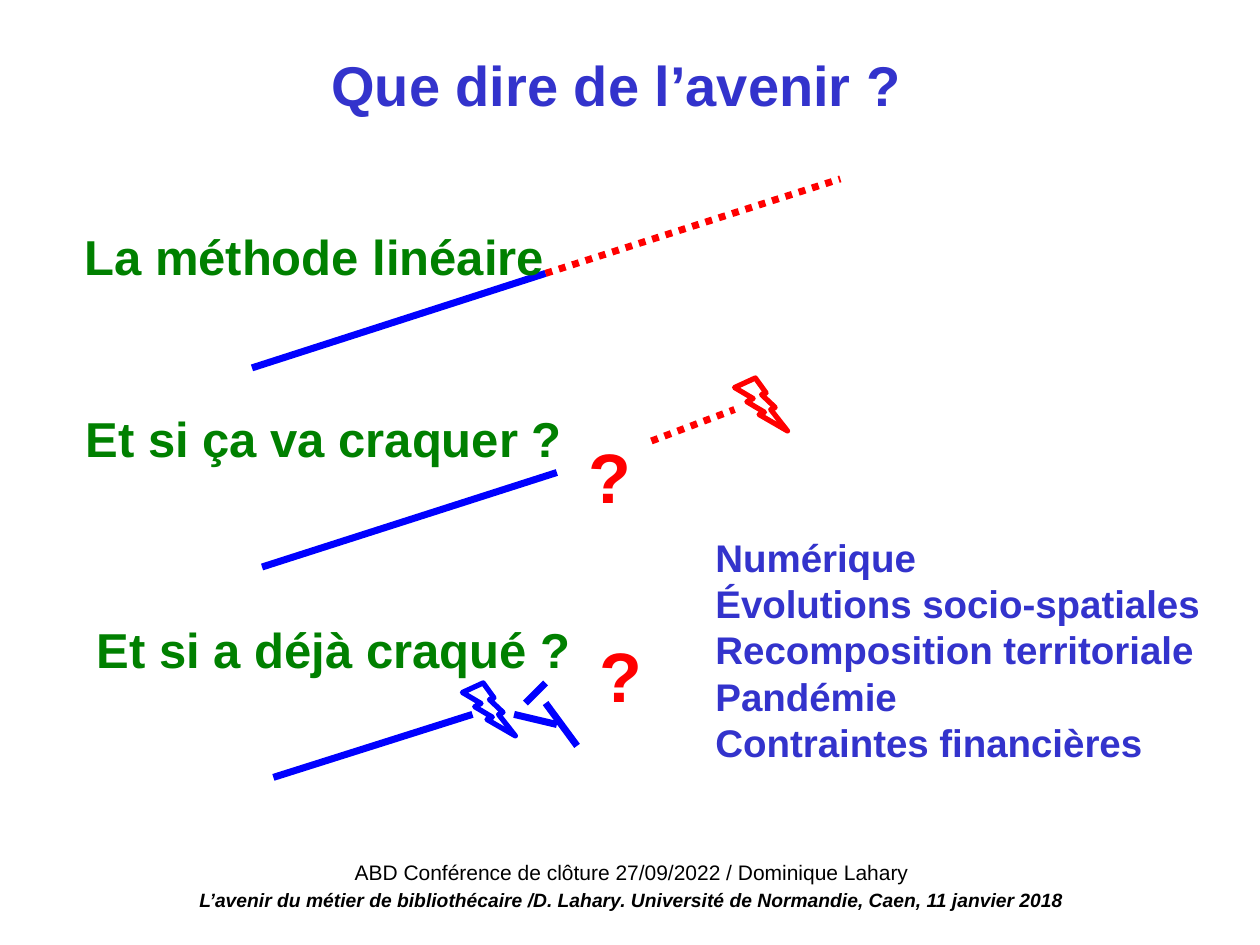
import lxml.etree
import pptx
import pptx.dml.color
import pptx.enum.dml
import pptx.enum.shapes
import pptx.enum.text
import pptx.oxml.ns
import pptx.util
from dataclasses import dataclass
from pptx.util import Inches

RGB = pptx.dml.color.RGBColor.from_string
ALIGN = pptx.enum.text.PP_ALIGN
ANCHOR = pptx.enum.text.MSO_ANCHOR
DOTTED = pptx.enum.dml.MSO_LINE.ROUND_DOT


@dataclass(frozen=True)
class Theme:
    font: str = "Arial"
    violet: str = "3333CC"
    green: str = "008000"
    blue: str = "0000FF"
    red: str = "FF0000"
    black: str = "000000"
    title: int = 32
    label: int = 28
    mark: int = 40
    factor: int = 22
    event: int = 12
    source: int = 11
    line: int = 4
    bolt: int = 3


THEME = Theme()


def write(tf, lines, size, color, align=ALIGN.LEFT, inset=(0.1, 0.05), anchor=ANCHOR.TOP, **fmt):
    dx, dy = map(Inches, inset)
    frame = dict(word_wrap=True, vertical_anchor=anchor, margin_left=dx,
                 margin_right=dx, margin_top=dy, margin_bottom=dy)
    for name, value in frame.items():
        setattr(tf, name, value)
    font = dict(name=THEME.font, size=pptx.util.Pt(size), **fmt)
    for i, line in enumerate(lines):
        p = tf.add_paragraph() if i else tf.paragraphs[0]
        p.text = line
        p.alignment = align
        for r in p.runs:
            for name, value in font.items():
                setattr(r.font, name, value)
            r.font.color.rgb = RGB(color)


def add_text(s, box, lines, size, color, **fmt):
    sp = s.shapes.add_textbox(*map(Inches, box))
    write(sp.text_frame, lines, size, color, **fmt)


def add_line(s, box, start, end, color, dash=None):
    x, y = box[:2]
    ends = (x + start[0], y + start[1], x + end[0], y + end[1])
    sp = s.shapes.add_connector(pptx.enum.shapes.MSO_CONNECTOR.STRAIGHT, *map(Inches, ends))
    sp.line.color.rgb = RGB(color)
    sp.line.width = pptx.util.Pt(THEME.line)
    if dash:
        sp.line.dash_style = dash
    lxml.etree.SubElement(sp._element.spPr, pptx.oxml.ns.qn("a:effectLst"))


def add_bolt(s, box, at, color):
    place = (box[0] + at[0], box[1] + at[1], 0.42, 0.42)
    sp = s.shapes.add_shape(pptx.enum.shapes.MSO_SHAPE.LIGHTNING_BOLT, *map(Inches, place))
    sp.shadow.inherit = False
    sp.fill.background()
    sp.line.color.rgb = RGB(color)
    sp.line.width = pptx.util.Pt(THEME.bolt)


def add_label(s, box, top, text):
    add_text(s, (box[0], box[1] + top, 4.2, 0.45), [text], THEME.label, THEME.green,
             inset=(0, 0), bold=True)


def add_mark(s, box, at):
    add_text(s, (box[0] + at[0], box[1] + at[1], 0.42, 0.63), ["?"], THEME.mark, THEME.red,
             align=ALIGN.RIGHT, inset=(0, 0), bold=True)


def title(s, box):
    sp = s.shapes.title
    for name, value in zip(("left", "top", "width", "height"), box):
        setattr(sp, name, Inches(value))
    write(sp.text_frame, ["Que dire de l’avenir ? "], THEME.title, THEME.violet,
          align=ALIGN.CENTER, anchor=ANCHOR.MIDDLE, bold=True)


def linear_method(s, box):
    w, h = box[2:]
    middle = (3.66, h / 2)
    add_line(s, box, (1.33, h), middle, THEME.blue)
    add_line(s, box, middle, (w, 0), THEME.red, DOTTED)
    add_label(s, box, 0.38, "La méthode linéaire")


def future_break(s, box):
    w, h = box[2:]
    add_label(s, box, 0.24, "Et si ça va craquer ?")
    add_line(s, box, (1.4, h), (3.74, h / 2), THEME.blue)
    add_line(s, box, (4.49, 0.5), (5.15, 0.25), THEME.red, DOTTED)
    add_bolt(s, box, (w - 0.42, 0), THEME.red)
    add_mark(s, box, (3.91, 0.44))


def past_break(s, box):
    h = box[3]
    add_label(s, box, 0, "Et si a déjà craqué ?")
    add_line(s, box, (1.4, h), (2.98, h - 0.5), THEME.blue)
    add_bolt(s, box, (2.9, 0.5), THEME.blue)
    add_mark(s, box, (3.91, 0.1))
    shards = [((3.31, 0.75), (3.65, 0.83)),
              ((3.4, 0.66), (3.56, 0.5)),
              ((3.56, 0.66), (3.81, 1))]
    for start, end in shards:
        add_line(s, box, start, end, THEME.blue)


def factors(s, box):
    lines = ["Numérique", "Évolutions socio-spatiales\vRecomposition territoriale",
             "Pandémie", "Contraintes financières"]
    add_text(s, box, lines, THEME.factor, THEME.violet, bold=True)


def footer(s, box):
    x, y, w, h = box
    add_text(s, (x, y, w, h), ["ABD Conférence de clôture 27/09/2022 / Dominique Lahary"],
             THEME.event, THEME.black, align=ALIGN.CENTER)
    add_text(s, (x, y + 0.23, w, h),
             ["L’avenir du métier de bibliothécaire /D. Lahary. "
              "Université de Normandie, Caen, 11 janvier 2018"],
             THEME.source, THEME.black, align=ALIGN.CENTER, bold=True, italic=True)


def main():
    prs = pptx.Presentation()
    prs.slide_width, prs.slide_height = Inches(10), Inches(7.5)
    s = prs.slides.add_slide(prs.slide_layouts[5])
    title(s, (0.33, 0, 9.25, 1.33))
    linear_method(s, (0.67, 1.42, 6, 1.5))
    future_break(s, (0.68, 3, 5.57, 1.5))
    past_break(s, (0.77, 4.92, 3.81, 1.25))
    factors(s, (5.58, 4.19, 4.06, 2.06))
    footer(s, (0.35, 6.77, 9.33, 0.5))
    prs.save("out.pptx")


if __name__ == "__main__":
    main()
